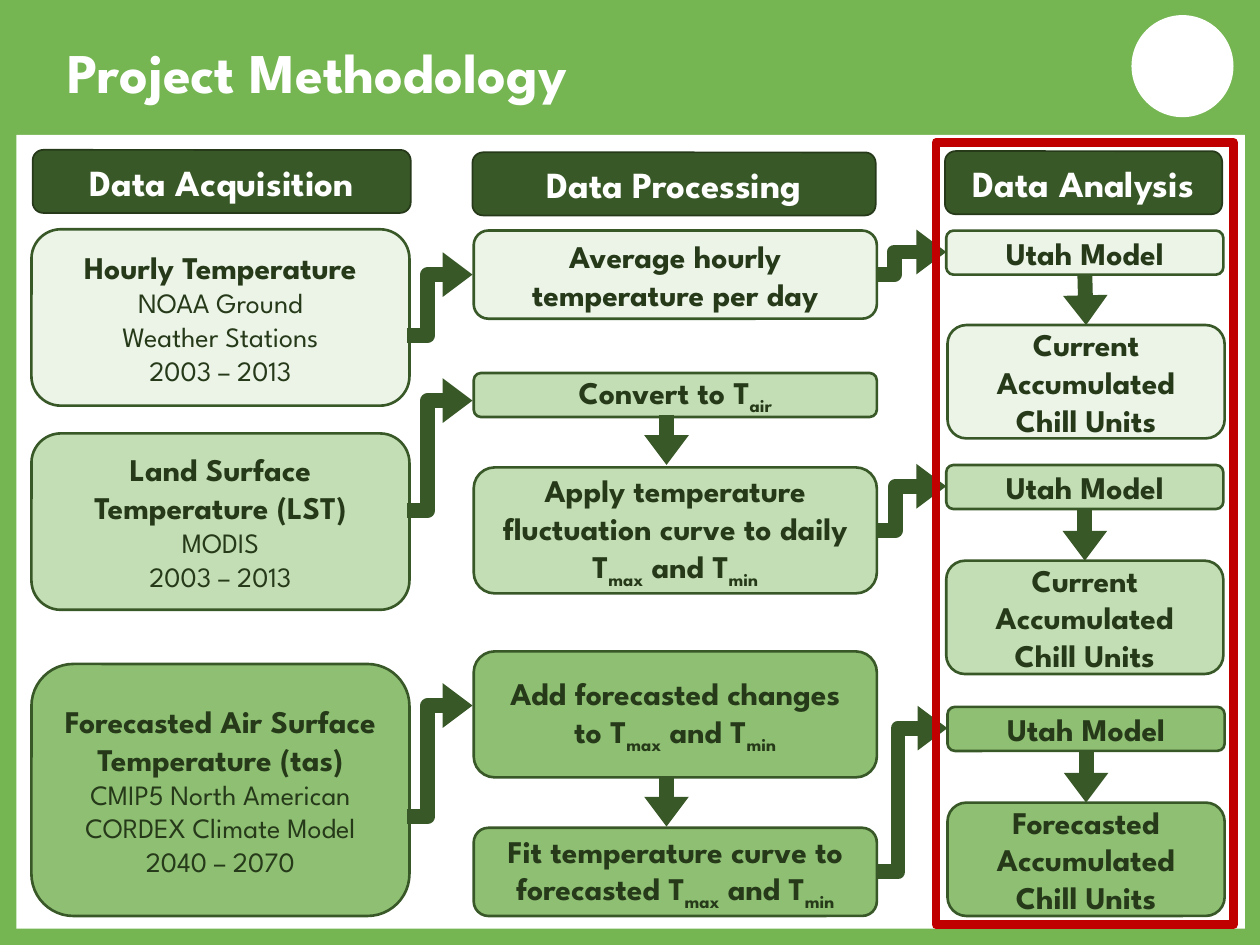
from pptx import Presentation
from pptx import util as u
from pptx.dml.color import RGBColor
from pptx.enum import shapes, text
from pptx.oxml.ns import qn
from lxml import etree

THEME = {
    "font": "League Spartan",
    "green": "75B552", "white": "FFFFFF", "dark": "395828", "ink": "263A1A",
    "current": "D9EAD0", "surface": "C3DEB4", "forecast": "8EBF73", "focus": "C00000",
    "title": 32, "header": 21, "label": 18, "detail": 16,
}
ALPHA = {"current": 50}
COLUMN_WIDTH = {"acquisition": 3, "processing": 3.2, "analysis": 2.2}

# Content: column, left, top, words
HEADERS = [
    ("acquisition", 0.26, 1.19, "Data Acquisition"),
    ("processing", 3.75, 1.21, "Data Processing"),
    ("analysis", 7.5, 1.2, "Data Analysis"),
]
# name: column, left, top, height, fill, bold lines, detail lines (~ encloses a subscript)
STEPS = {
    "hourly": ("acquisition", 0.25, 1.82, 1.4, "current", ["Hourly Temperature"],
               ["NOAA Ground", "Weather Stations", "2003 – 2013"]),
    "surface": ("acquisition", 0.25, 3.44, 1.4, "surface",
                ["Land Surface", "Temperature (LST)"], ["MODIS", "2003 – 2013"]),
    "forecast": ("acquisition", 0.25, 5.27, 2, "forecast",
                 ["Forecasted Air Surface Temperature (tas)"],
                 ["CMIP5 North American CORDEX Climate Model", "2040 – 2070"]),
    "average": ("processing", 3.76, 1.83, 0.7, "current",
                ["Average hourly", "temperature per day"], []),
    "convert": ("processing", 3.76, 2.96, 0.35, "surface", ["Convert to T~air~"], []),
    "apply": ("processing", 3.76, 3.71, 1, "surface",
              ["Apply temperature fluctuation curve to daily T~max~ and T~min~"], []),
    "add": ("processing", 3.76, 5.17, 1, "forecast",
            ["Add forecasted changes", "to T~max~ and T~min~"], []),
    "fit": ("processing", 3.76, 6.57, 0.7, "forecast",
            ["Fit temperature curve to forecasted T~max~ and T~min~"], []),
    "utah 1": ("analysis", 7.51, 1.83, 0.35, "current", ["Utah Model"], []),
    "chill 1": ("analysis", 7.52, 2.58, 0.9, "current",
                ["Current Accumulated", "Chill Units"], []),
    "utah 2": ("analysis", 7.51, 3.69, 0.35, "surface", ["Utah Model"], []),
    "chill 2": ("analysis", 7.51, 4.45, 0.9, "surface",
                ["Current Accumulated", "Chill Units"], []),
    "utah 3": ("analysis", 7.52, 5.61, 0.35, "forecast", ["Utah Model"], []),
    "chill 3": ("analysis", 7.52, 6.37, 0.9, "forecast",
                ["Forecasted Accumulated Chill Units"], []),
}
# Elbow arrows: start, end, share of the width before the bend
ELBOWS = [
    ((3.23, 2.66), (3.75, 2.18), 0.32), ((3.23, 4.05), (3.75, 3.18), 0.32),
    ((3.23, 6.48), (3.75, 5.6), 0.32), ((6.96, 2.18), (7.51, 2), 0.25),
    ((6.96, 4.21), (7.51, 3.86), 0.27), ((6.96, 6.92), (7.52, 5.78), 0.3),
]
# Down arrows in the processing column sit left of the box centres
PROCESSING_ARROWS_X, PROCESSING_ARROWS_TOP, ARROW_DROP = 5.29, (3.29, 6.16), 0.4
ANALYSIS_PAIRS = [(f"utah {row}", f"chill {row}") for row in (1, 2, 3)]

deck = Presentation()
deck.slide_width, deck.slide_height = u.Inches(10), u.Inches(7.5)
page = deck.slides.add_slide(deck.slide_layouts[6])


def color(name):
    return RGBColor.from_string(THEME[name])


def write(box, lines, *, size, ink, bold=True, align=text.PP_ALIGN.CENTER,
          anchor=text.MSO_ANCHOR.MIDDLE, spacing=None, append=False):
    """Write one paragraph per line; text between ~ marks becomes subscript."""
    frame = box.text_frame
    frame.word_wrap, frame.vertical_anchor = True, anchor
    for index, line in enumerate(lines):
        para = frame.add_paragraph() if append or index else frame.paragraphs[0]
        para.alignment = align
        if spacing:
            para.line_spacing = spacing
        for part, words in enumerate(line.split("~")):
            if not words:
                continue
            span = para.add_run()
            span.text = words
            span.font.name, span.font.size = THEME["font"], u.Pt(THEME[size])
            span.font.bold, span.font.color.rgb = bold, color(ink)
            if part % 2:
                span.font._element.set("baseline", "-25000")


def add_box(kind, left, top, width, height, fill=None, line=None, weight=1):
    box = page.shapes.add_shape(kind, *map(u.Inches, (left, top, width, height)))
    box.shadow.inherit = False
    if fill:
        box.fill.solid()
        box.fill.fore_color.rgb = color(fill)
        if fill in ALPHA:
            tone = box.fill._xPr.find(qn("a:solidFill"))[0]
            etree.SubElement(tone, qn("a:alpha"), val=str(ALPHA[fill] * 1000))
    else:
        box.fill.background()
    if line:
        box.line.color.rgb, box.line.width = color(line), u.Pt(weight)
    else:
        box.line.fill.background()
    return box


def add_arrow(start, end, bend=None):
    kind = shapes.MSO_CONNECTOR.STRAIGHT if bend is None else shapes.MSO_CONNECTOR.ELBOW
    arrow = page.shapes.add_connector(kind, *map(u.Inches, (*start, *end)))
    arrow.line.color.rgb, arrow.line.width = color("dark"), u.Pt(8.5)
    etree.SubElement(arrow.line._get_or_add_ln(), qn("a:tailEnd"),
                     type="triangle", w="med", len="sm")
    properties = arrow._element.spPr
    etree.SubElement(properties, qn("a:effectLst"))
    if bend is not None:
        guides = properties.find(qn("a:prstGeom")).get_or_add_avLst()
        etree.SubElement(guides, qn("a:gd"), name="adj1", fmla=f"val {round(bend * 100000)}")
    return arrow


RECT, ROUND, OVAL = (shapes.MSO_SHAPE.RECTANGLE, shapes.MSO_SHAPE.ROUNDED_RECTANGLE,
                     shapes.MSO_SHAPE.OVAL)

# Frame, panel and round emblem
add_box(RECT, 0, 0, 10, 7.5, "green")
add_box(RECT, 0.13, 1.07, 9.75, 6.3, "white")
add_box(OVAL, 8.98, 0.12, 0.81, 0.81, "white")

# Title
title = page.shapes.add_textbox(*map(u.Inches, (0.44, 0.17, 7.81, 0.72)))
write(title, ["Project Methodology"], size="title", ink="white", spacing=0.9,
      align=text.PP_ALIGN.LEFT, anchor=text.MSO_ANCHOR.BOTTOM)

# Column headers
for column, left, top, words in HEADERS:
    header = add_box(ROUND, left, top, COLUMN_WIDTH[column], 0.5, "dark", "ink")
    write(header, [words], size="header", ink="white")

# Steps
boxes = {}
for name, (column, left, top, height, fill, labels, details) in STEPS.items():
    box = add_box(ROUND, left, top, COLUMN_WIDTH[column], height, fill, "dark", 1.5)
    write(box, labels, size="label", ink="ink")
    write(box, details, size="detail", ink="ink", bold=False, append=True)
    boxes[name] = box

# Arrows
for start, end, bend in ELBOWS:
    add_arrow(start, end, bend)
for top in PROCESSING_ARROWS_TOP:
    add_arrow((PROCESSING_ARROWS_X, top), (PROCESSING_ARROWS_X, top + ARROW_DROP))
for model, result in ANALYSIS_PAIRS:
    arrow = add_arrow((0, 0), (1, 1))
    arrow.begin_connect(boxes[model], 2)
    arrow.end_connect(boxes[result], 0)

# Highlight around the analysis column
add_box(RECT, 7.43, 1.13, 2.36, 6.21, line="focus", weight=5)

deck.save("out.pptx")
